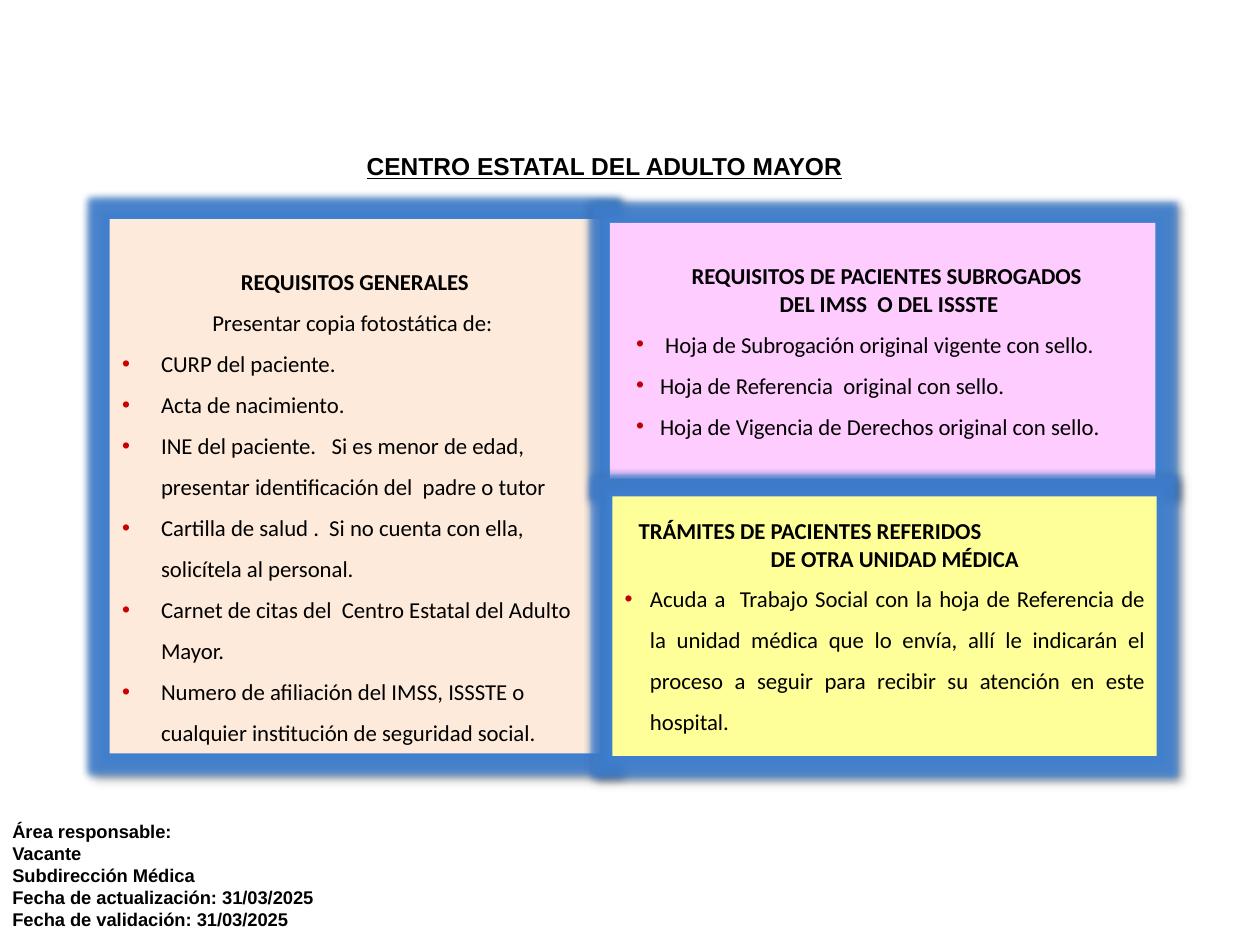
from lxml.etree import SubElement
from pptx import Presentation
from pptx.dml.color import RGBColor
from pptx.enum.shapes import MSO_SHAPE
from pptx.enum.text import MSO_ANCHOR, MSO_AUTO_SIZE, PP_ALIGN
from pptx.oxml.ns import qn
from pptx.util import Inches, Pt

HEADING = {"name": "Calibri", "size": Pt(13), "bold": True}
BODY = {"name": "Calibri", "size": Pt(13), "bold": False}
FOOTER = {"name": "Arial", "size": Pt(10.5), "bold": True}
TITLE = {"name": "Arial", "size": Pt(14), "bold": True, "underline": True}

GENERAL_ITEMS = [
    "CURP del paciente.",
    "Acta de nacimiento.",
    "INE del paciente.   Si es menor de edad, presentar identificación del  padre o tutor",
    "Cartilla de salud .  Si no cuenta con ella,  solicítela al personal.",
    "Carnet de citas del  Centro Estatal del Adulto Mayor.",
    "Numero de afiliación del IMSS, ISSSTE o cualquier institución de seguridad social.",
]
SUBROGATED_ITEMS = [
    " Hoja de Subrogación original vigente con sello. ",
    "Hoja de Referencia  original con sello. ",
    "Hoja de Vigencia de Derechos original con sello. ",
]
REFERRAL_ITEM = (
    "Acuda a  Trabajo Social con la hoja de Referencia de la unidad médica que lo envía, "
    "allí le indicarán el proceso a seguir para recibir su atención en este hospital."
)
FOOTER_LINES = [
    "Área responsable:",
    "Vacante",
    "Subdirección Médica",
    "Fecha de actualización: 31/03/2025",
    "Fecha de validación: 31/03/2025",
]


def color(value):
    """Turn a hex string into a colour."""
    return RGBColor.from_string(value)


def apply(target, values):
    """Set every attribute named in a dict of format values."""
    for name, value in values.items():
        setattr(target, name, value)


def add_effect(effects, kind, value, alpha, attributes):
    """Append one coloured effect to an effect list."""
    effect = SubElement(effects, qn(f"a:{kind}"), attributes)
    tint = SubElement(effect, qn("a:srgbClr"), val=value)
    SubElement(tint, qn("a:alpha"), val=str(alpha * 1000))


def add_glow(shape):
    """Surround a shape with a blue glow and a soft shadow."""
    shape.shadow.inherit = False
    effects = shape._element.spPr.find(qn("a:effectLst"))
    add_effect(effects, "glow", "3F7FCF", 90, {"rad": str(Inches(0.11))})
    shadow = {"blurRad": str(Pt(4)), "dist": str(Pt(3)), "dir": "2700000", "rotWithShape": "0"}
    add_effect(effects, "outerShdw", "000000", 40, shadow)


def add_paragraph(frame, text, font, alignment=PP_ALIGN.LEFT, spacing=1.0,
                  margin=0, indent=0, bullet=None):
    """Write a paragraph, using the first one while it is empty."""
    first = frame.paragraphs[0]
    para = frame.add_paragraph() if first.runs else first
    properties = para._p.get_or_add_pPr()
    properties.set("marL", str(Inches(margin)))
    properties.set("indent", str(Inches(indent)))
    if bullet:
        tint = SubElement(properties, qn("a:buClr"))
        SubElement(tint, qn("a:srgbClr"), val=bullet)
        SubElement(properties, qn("a:buFont"), typeface="Arial")
        SubElement(properties, qn("a:buChar"), char="•")
    apply(para, {"alignment": alignment, "line_spacing": spacing, "space_before": Pt(0)})
    span = para.add_run()
    span.text = text
    apply(span.font, font)
    span.font.color.rgb = color("000000")


def add_panel(page, place, fill, top_inset=0.05):
    """Add a glowing rectangle and return its text frame."""
    panel = page.shapes.add_shape(MSO_SHAPE.RECTANGLE, *map(Inches, place))
    panel.fill.solid()
    panel.fill.fore_color.rgb = color(fill)
    panel.line.fill.background()
    add_glow(panel)
    frame = panel.text_frame
    apply(frame, {"word_wrap": True, "vertical_anchor": MSO_ANCHOR.MIDDLE,
                  "margin_top": Inches(top_inset)})
    return frame


def add_title(page):
    """Move the title placeholder and write the heading."""
    title = page.shapes.title
    apply(title, {"left": Inches(2.81), "top": Inches(1.15),
                  "width": Inches(5.49), "height": Inches(0.34)})
    apply(title.text_frame, {"word_wrap": True, "vertical_anchor": MSO_ANCHOR.TOP,
                             "auto_size": MSO_AUTO_SIZE.SHAPE_TO_FIT_TEXT})
    add_paragraph(title.text_frame, "CENTRO ESTATAL DEL ADULTO MAYOR", TITLE)


def add_footer(page):
    """Add the responsible area and the dates."""
    box = page.shapes.add_textbox(*map(Inches, (0, 6.46, 3.7, 0.98)))
    apply(box.text_frame, {"word_wrap": True, "auto_size": MSO_AUTO_SIZE.SHAPE_TO_FIT_TEXT})
    for line in FOOTER_LINES:
        add_paragraph(box.text_frame, line, FOOTER)


def add_general(page):
    """Add the panel of general requirements."""
    frame = add_panel(page, (0.87, 1.74, 3.89, 4.24), "FDEADA", top_inset=0.27)
    for text, font in (("REQUISITOS GENERALES", HEADING),
                       ("Presentar copia fotostática de: ", BODY)):
        add_paragraph(frame, text, font, PP_ALIGN.CENTER, 1.5, 0.2, -0.2)
    for item in GENERAL_ITEMS:
        add_paragraph(frame, item, BODY, PP_ALIGN.LEFT, 1.5, 0.31, -0.31, "CC0000")


def add_subrogated(page):
    """Add the panel for subrogated patients."""
    frame = add_panel(page, (4.84, 1.77, 4.33, 2.03), "FFCCFF")
    for text in ("REQUISITOS DE PACIENTES SUBROGADOS ", "DEL IMSS  O DEL ISSSTE"):
        add_paragraph(frame, text, HEADING, PP_ALIGN.CENTER, margin=0.1)
    for item in SUBROGATED_ITEMS:
        add_paragraph(frame, item, BODY, PP_ALIGN.JUSTIFY, 1.5, 0.3, -0.19, "C00000")


def add_referred(page):
    """Add the panel for referred patients."""
    frame = add_panel(page, (4.86, 3.94, 4.32, 2.06), "FFFF99")
    add_paragraph(frame, "TRÁMITES DE PACIENTES REFERIDOS", HEADING, margin=0.11)
    add_paragraph(frame, "DE OTRA UNIDAD MÉDICA ", HEADING, PP_ALIGN.CENTER, margin=0.2)
    add_paragraph(frame, REFERRAL_ITEM, BODY, PP_ALIGN.JUSTIFY, 1.5, 0.2, -0.2, "C00000")


def main():
    """Build the slide and save it."""
    deck = Presentation()
    apply(deck, {"slide_width": Inches(10), "slide_height": Inches(7.5)})
    page = deck.slides.add_slide(deck.slide_layouts.get_by_name("Title Only"))
    for add_part in (add_footer, add_general, add_subrogated, add_referred, add_title):
        add_part(page)
    deck.save("out.pptx")


if __name__ == "__main__":
    main()
